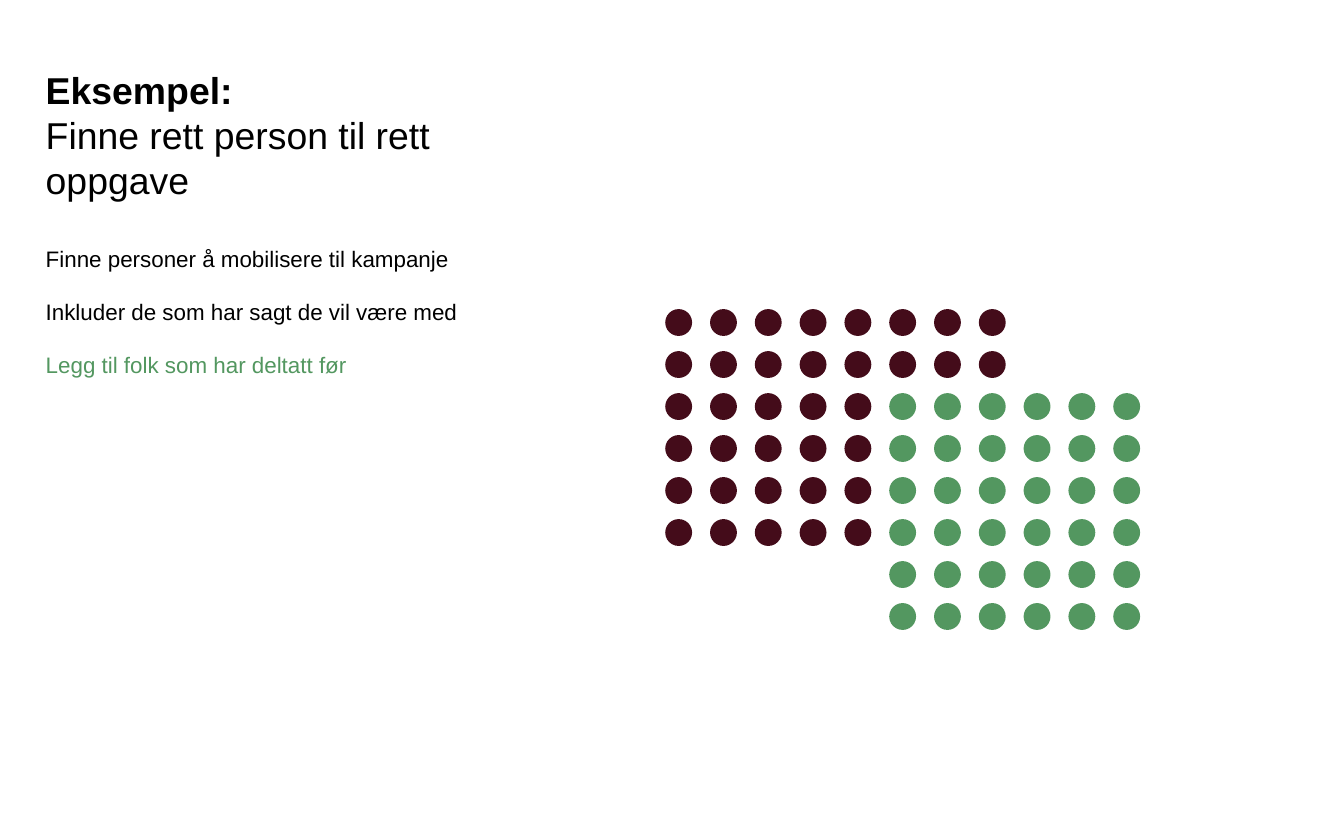
"""Build a slide with a heading, three steps and two overlapping groups of dots."""
import pptx
import pptx.util
import pptx.dml.color
import pptx.enum.shapes
import pptx.enum.text
import pptx.oxml.ns
import lxml.etree

Inches, Pt = pptx.util.Inches, pptx.util.Pt
RGBColor = pptx.dml.color.RGBColor
BLACK = RGBColor(0x00, 0x00, 0x00)
MAROON = RGBColor(0x44, 0x0C, 0x1A)
GREEN = RGBColor(0x53, 0x97, 0x60)

TITLE = [("Eksempel:", True), ("Finne rett person til rett oppgave", False)]
STEPS = [
    ("Finne personer å mobilisere til kampanje", BLACK),
    ("Inkluder de som har sagt de vil være med", BLACK),
    ("Legg til folk som har deltatt før", GREEN),
]
# Each block: first column, first row, columns, rows, colour
DOT_BLOCKS = [(0, 0, 8, 6, MAROON), (5, 2, 6, 6, GREEN)]
GRID_LEFT, GRID_TOP = 4.95, 2.3
COLUMN, ROW, DOT = 1 / 3, 0.3125, 0.2


def place(shape, left, top, width, height):
    shape.left, shape.top = Inches(left), Inches(top)
    shape.width, shape.height = Inches(width), Inches(height)


def set_frame(shape, anchor):
    tf = shape.text_frame
    frame_format = {
        "word_wrap": True,
        "auto_size": pptx.enum.text.MSO_AUTO_SIZE.NONE,
        "vertical_anchor": anchor,
        "margin_left": Inches(0.1), "margin_right": Inches(0.1),
        "margin_top": Inches(0.1), "margin_bottom": Inches(0.1),
    }
    for name, value in frame_format.items():
        setattr(tf, name, value)
    return tf


def set_paragraph(p, **values):
    values = {"alignment": pptx.enum.text.PP_ALIGN.LEFT, "space_before": Pt(0), **values}
    for name, value in values.items():
        setattr(p, name, value)


def add_run(p, text, size, color, bold=False):
    r = p.add_run()
    r.text = text
    for name, value in {"name": "Arial", "size": Pt(size), "bold": bold}.items():
        setattr(r.font, name, value)
    r.font.color.rgb = color


def add_title(s):
    place(s.shapes.title, 0.24, 0.68, 3.07, 0.92)
    p = set_frame(s.shapes.title, pptx.enum.text.MSO_ANCHOR.BOTTOM).paragraphs[0]
    set_paragraph(p, line_spacing=1.0)
    for i, (text, bold) in enumerate(TITLE):
        if i:
            p.add_line_break()
        add_run(p, text, 20, BLACK, bold)


def add_steps(s):
    body = s.placeholders[1]
    place(body, 0.24, 1.69, 3.78, 3.56)
    tf = set_frame(body, pptx.enum.text.MSO_ANCHOR.TOP)
    for i, (text, color) in enumerate(STEPS):
        p = tf.add_paragraph() if i else tf.paragraphs[0]
        set_paragraph(p, line_spacing=1.15, space_after=Pt(12))
        props = p._p.get_or_add_pPr()
        props.set("marL", "0")
        props.set("indent", "0")
        lxml.etree.SubElement(props, pptx.oxml.ns.qn("a:buNone"))
        add_run(p, text, 12, color)


def add_dots(s):
    cells = {}
    for first_col, first_row, cols, rows, color in DOT_BLOCKS:
        for row in range(first_row, first_row + rows):
            for col in range(first_col, first_col + cols):
                cells[col, row] = color
    for (col, row), color in cells.items():
        dot = s.shapes.add_shape(
            pptx.enum.shapes.MSO_SHAPE.OVAL,
            Inches(GRID_LEFT + col * COLUMN), Inches(GRID_TOP + row * ROW),
            Inches(DOT), Inches(DOT))
        dot.shadow.inherit = False
        dot.fill.solid()
        dot.fill.fore_color.rgb = color
        dot.line.fill.background()


def main():
    prs = pptx.Presentation()
    prs.slide_width, prs.slide_height = Inches(10), Inches(6.25)
    s = prs.slides.add_slide(prs.slide_layouts[1])
    add_title(s)
    add_steps(s)
    add_dots(s)
    prs.save("out.pptx")


if __name__ == "__main__":
    main()
